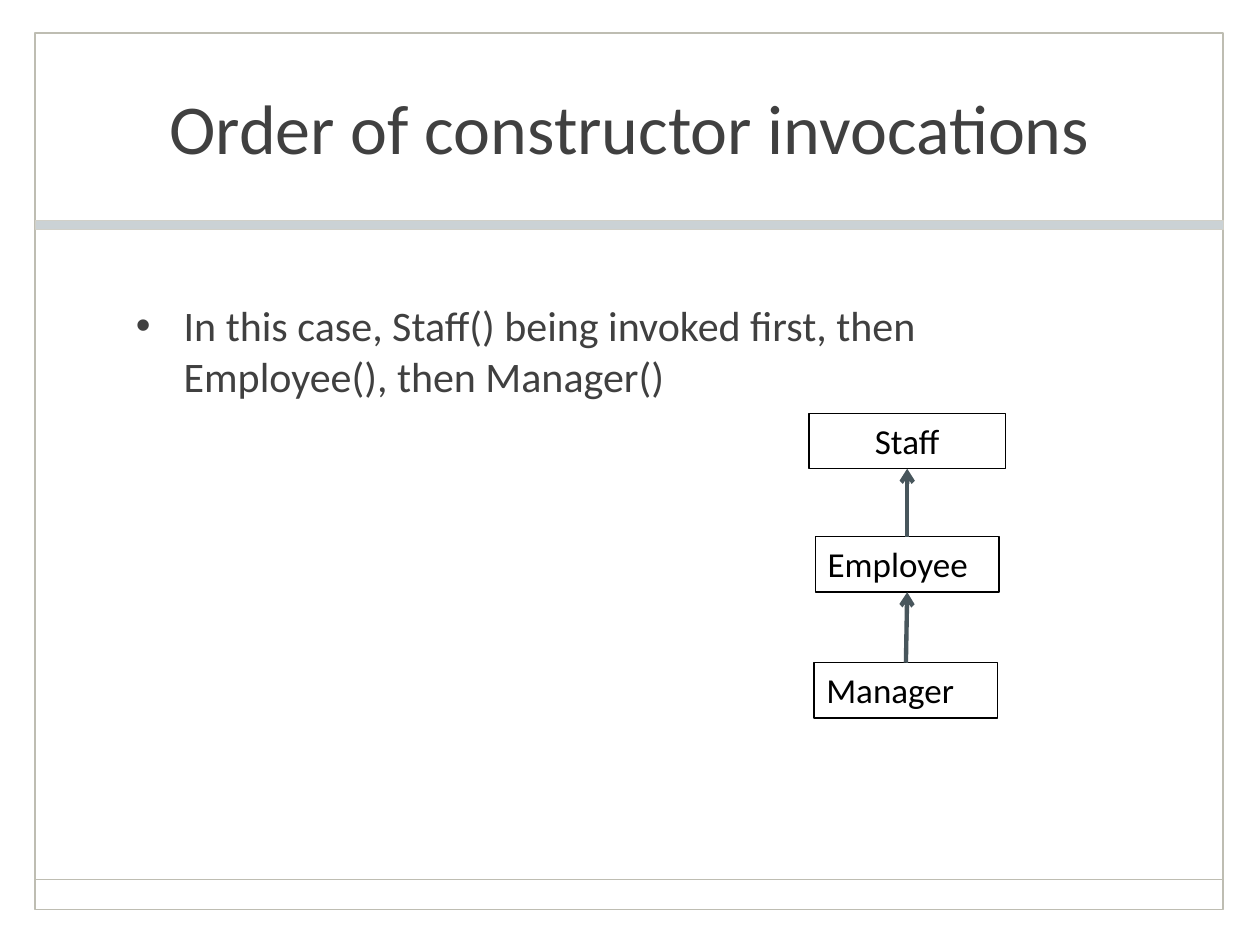
from lxml.etree import SubElement
from pptx import Presentation
from pptx.dml.color import RGBColor
from pptx.enum.shapes import MSO_CONNECTOR as Conn, MSO_SHAPE as Shape
from pptx.enum.text import MSO_ANCHOR as Anchor, MSO_AUTO_SIZE as Fit, PP_ALIGN as Align
from pptx.oxml.ns import qn
from pptx.util import Inches, Pt


def color(code):
    return RGBColor.from_string(code)


def write(frame, text, size=20, ink="000000", align=Align.LEFT,
          anchor=Anchor.TOP, bullet=None, indent=0.38):
    frame.word_wrap = True
    frame.auto_size = Fit.NONE
    frame.vertical_anchor = anchor
    para = frame.paragraphs[0]
    para.text = text
    para.alignment = align
    if bullet:
        props = para._p.get_or_add_pPr()
        props.set("marL", str(Inches(indent)))
        props.set("indent", str(-Inches(indent)))
        tint = SubElement(props, qn("a:buClr"))
        SubElement(tint, qn("a:srgbClr"), val=ink)
        SubElement(props, qn("a:buFont"), typeface="Arial")
        SubElement(props, qn("a:buChar"), char=bullet)
    font = para.runs[0].font
    font.name, font.size = "Calibri", Pt(size)
    font.color.rgb = color(ink)


class Page:
    ink = "404040"
    frame_line = "BEBDB2"
    arrow_line = "48565C"

    def __init__(self, deck):
        self.slide = deck.slides.add_slide(deck.slide_layouts[5])
        self.shapes = self.slide.shapes

    def title(self, text, left, top, width, height):
        head = self.shapes.title
        head.left, head.top = Inches(left), Inches(top)
        head.width, head.height = Inches(width), Inches(height)
        write(head.text_frame, text, size=40, ink=self.ink,
              align=Align.CENTER, anchor=Anchor.MIDDLE)

    def body(self, text, left, top, width, height):
        box = self.shapes.add_textbox(Inches(left), Inches(top), Inches(width), Inches(height))
        write(box.text_frame, text, size=24, ink=self.ink, bullet="•")

    def rect(self, left, top, width, height, line, weight, fill=None):
        box = self.shapes.add_shape(Shape.RECTANGLE, Inches(left), Inches(top),
                                    Inches(width), Inches(height))
        box.shadow.inherit = False
        if fill:
            box.fill.solid()
            box.fill.fore_color.rgb = color(fill)
        else:
            box.fill.background()
        box.line.color.rgb = color(line)
        box.line.width = Pt(weight)
        return box

    def node(self, text, left, top, width, align=Align.LEFT):
        box = self.rect(left, top, width, 0.44, "000000", 0.75)
        write(box.text_frame, text, align=align)
        return box

    def line(self, x1, y1, x2, y2, ink, weight):
        link = self.shapes.add_connector(Conn.STRAIGHT, Inches(x1), Inches(y1),
                                         Inches(x2), Inches(y2))
        link.line.color.rgb = color(ink)
        link.line.width = Pt(weight)
        SubElement(link._element.spPr, qn("a:effectLst"))
        return link

    def arrow(self, child, parent):
        """Point from the top of child to the bottom of parent."""
        link = self.line(0, 0, 1, 1, self.arrow_line, 2.5)
        link.begin_connect(child, 0)
        link.end_connect(parent, 2)
        SubElement(link.line._get_or_add_ln(), qn("a:tailEnd"), type="arrow")


def main():
    deck = Presentation()
    deck.slide_width, deck.slide_height = Inches(10), Inches(7.5)
    page = Page(deck)

    left, width = 0.28, 9.43
    page.rect(left, 0.26, width, 6.96, page.frame_line, 1)
    page.line(left, 6.98, left + width, 6.98, page.frame_line, 1)
    page.rect(left, 1.75, width, 0.07, "D1D0C8", 0.25, fill="CBD2D5")

    page.title("Order of constructor invocations", 0.98, 0.27, 8.03, 1.47)
    page.body("In this case, Staff() being invoked first, then Employee(), then Manager()",
              0.98, 2.33, 8.03, 4.3)

    staff = page.node("Staff", 6.42, 3.28, 1.56, align=Align.CENTER)
    employee = page.node("Employee", 6.47, 4.26, 1.46)
    manager = page.node("Manager", 6.46, 5.26, 1.46)
    page.arrow(employee, staff)
    page.arrow(manager, employee)

    deck.save("out.pptx")


if __name__ == "__main__":
    main()
